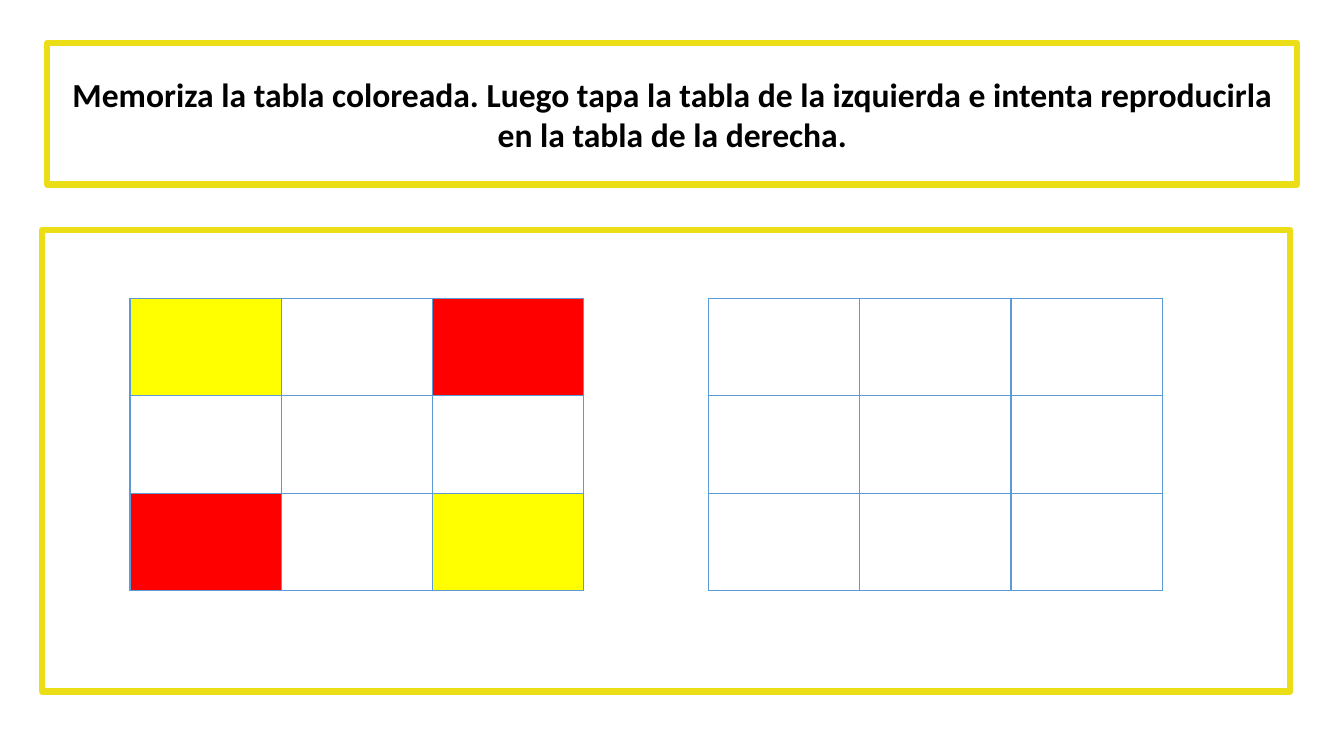
from lxml import etree
from pptx import Presentation
from pptx.dml.color import RGBColor
from pptx.enum.shapes import MSO_SHAPE
from pptx.enum.text import MSO_ANCHOR, PP_ALIGN
from pptx.oxml.ns import qn
from pptx.util import Pt

RECTANGLE = MSO_SHAPE.RECTANGLE
MIDDLE = MSO_ANCHOR.MIDDLE
CENTER = PP_ALIGN.CENTER

COLORS = {
    "white": "FFFFFF",
    "black": "000000",
    "frame": "EBDE17",
    "grid": "5B9BD5",
    "yellow": "FFFF00",
    "red": "FF0000",
}


class MemorySlide:
    """Holds the style and the current slide."""

    font = "Calibri"
    text_size = 24
    frame_width = 4.5
    grid_width = 1

    def __init__(self, slide):
        self.shapes = slide.shapes

    def color(self, name):
        return RGBColor.from_string(COLORS[name])

    def frame(self, left, top, width, height, text=None):
        box = self.shapes.add_shape(
            RECTANGLE, Pt(left), Pt(top), Pt(width), Pt(height))
        box.shadow.inherit = False
        box.fill.solid()
        box.fill.fore_color.rgb = self.color("white")
        box.line.color.rgb = self.color("frame")
        box.line.width = Pt(self.frame_width)
        if text:
            box.text_frame.word_wrap = True
            box.text_frame.vertical_anchor = MIDDLE
            para = box.text_frame.paragraphs[0]
            para.text = text
            para.alignment = CENTER
            para.font.name = self.font
            para.font.size = Pt(self.text_size)
            para.font.bold = True
            para.font.color.rgb = self.color("black")

    def border(self, cell):
        properties = cell._tc.get_or_add_tcPr()
        for side in ("a:lnL", "a:lnR", "a:lnT", "a:lnB"):
            line = etree.SubElement(
                properties, qn(side), w=str(Pt(self.grid_width)))
            fill = etree.SubElement(line, qn("a:solidFill"))
            etree.SubElement(fill, qn("a:srgbClr"), val=COLORS["grid"])

    def grid(self, left, top, width, height, size, filled):
        table = self.shapes.add_table(
            size, size, Pt(left), Pt(top), Pt(width), Pt(height)).table
        table.first_row = False
        table.horz_banding = False
        for row_number, row in enumerate(table.rows):
            for column_number, cell in enumerate(row.cells):
                self.border(cell)
                name = filled.get((row_number, column_number))
                if name:
                    cell.fill.solid()
                    cell.fill.fore_color.rgb = self.color(name)
                else:
                    cell.fill.background()


def main():
    deck = Presentation()
    deck.slide_width, deck.slide_height = Pt(960), Pt(540)
    page = MemorySlide(deck.slides.add_slide(deck.slide_layouts[6]))

    # Work area and instruction
    page.frame(30.24, 164.16, 891.36, 329.76)
    page.frame(33.84, 30.96, 892.8, 100.8,
               "Memoriza la tabla coloreada. Luego tapa la tabla de la "
               "izquierda e intenta reproducirla en la tabla de la derecha.")

    # Coloured grid to memorise, empty grid to fill in
    pattern = {(0, 0): "yellow", (0, 2): "red",
               (2, 0): "red", (2, 2): "yellow"}
    for left, filled in ((92.88, pattern), (506.16, {})):
        page.grid(left, 213.12, 324, 208.8, 3, filled)

    deck.save("out.pptx")


if __name__ == "__main__":
    main()
